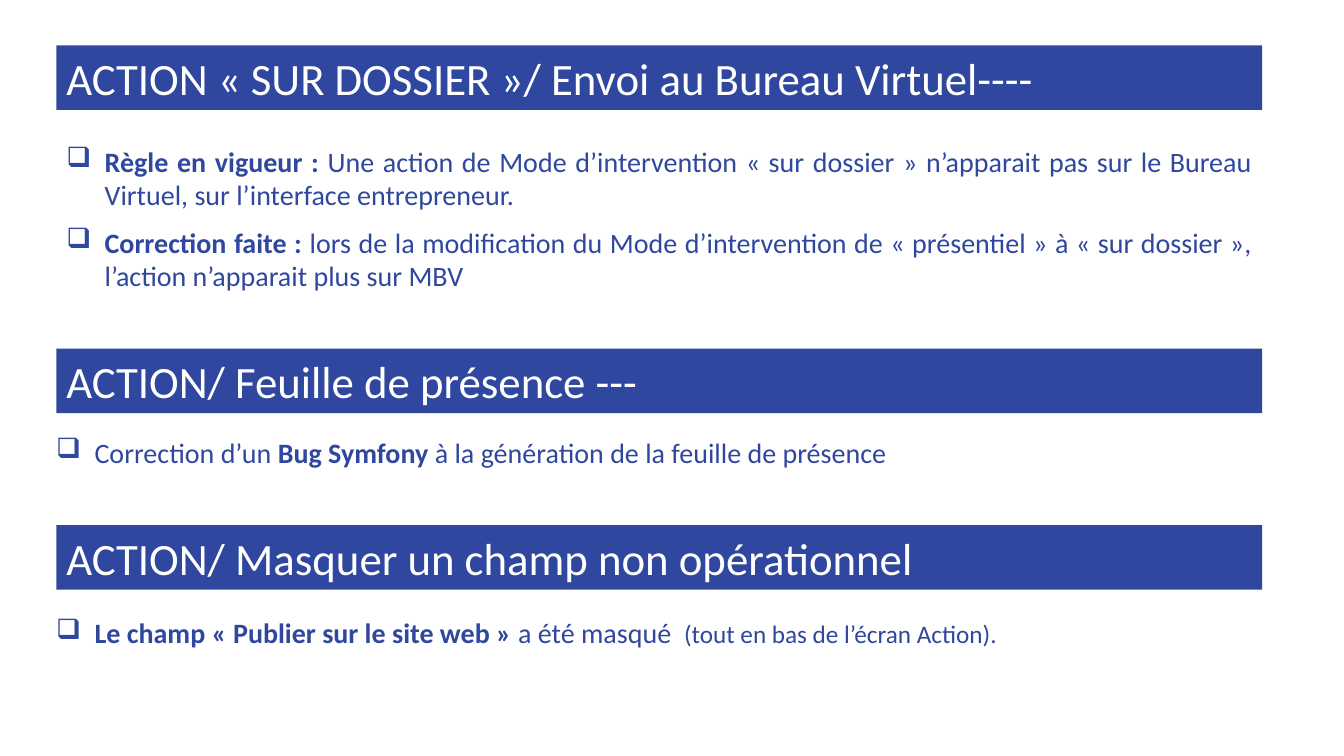
"""Build a slide of three blue heading bars, each followed by bulleted notes."""
from lxml import etree
from pptx import Presentation
from pptx.dml.color import RGBColor
from pptx.enum.shapes import MSO_SHAPE
from pptx.enum.text import MSO_ANCHOR, PP_ALIGN
from pptx.oxml.ns import qn
from pptx.util import Inches, Pt

RECTANGLE = MSO_SHAPE.RECTANGLE
TOP, MIDDLE = MSO_ANCHOR.TOP, MSO_ANCHOR.MIDDLE
LEFT, JUSTIFY = PP_ALIGN.LEFT, PP_ALIGN.JUSTIFY

COLORS = {"blue": "2F479E", "white": "FFFFFF"}
FONT = "Calibri"

deck = Presentation()
deck.slide_width, deck.slide_height = Inches(13.33), Inches(7.5)
page = deck.slides.add_slide(deck.slide_layouts[6])

COLUMN = deck.slide_width / 133.3
ROW = deck.slide_height / 75
BAR_LEFT, BAR_WIDTH, BAR_HEIGHT = 5.6, 119.6, 6.4
INDENT = Inches(0.38)


def write(para, spans, color, align=LEFT, after=0, bullet=None):
    para.alignment = align
    para.space_after = Pt(after)
    if bullet:
        properties = para._p.get_or_add_pPr()
        properties.set("marL", str(INDENT))
        properties.set("indent", str(-INDENT))
        etree.SubElement(properties, qn("a:buChar")).set("char", bullet)
    for text, size, bold in spans:
        span = para.add_run()
        span.text = text
        span.font.name = FONT
        span.font.size = Pt(size)
        span.font.bold = bold
        span.font.color.rgb = RGBColor.from_string(COLORS[color])


sections = [
    {
        "title": "ACTION « SUR DOSSIER »/ Envoi au Bureau Virtuel----",
        "bar_top": 4.5,
        "notes_box": (BAR_LEFT, 13.8, 15.9),
        "align": JUSTIFY,
        "notes": [
            [("Règle en vigueur : ", 20, True),
             ("Une action de Mode d’intervention « sur dossier » n’apparait pas "
              "sur le Bureau Virtuel, sur l’interface entrepreneur.", 20, False)],
            [("Correction faite : ", 20, True),
             ("lors de la modification du Mode d’intervention de « présentiel » "
              "à « sur dossier », l’action n’apparait plus sur MBV", 20, False)],
        ],
    },
    {
        "title": "ACTION/ Feuille de présence ---",
        "bar_top": 34.6,
        "notes_box": (BAR_LEFT - 1, 42.7, 4.4),
        "align": JUSTIFY,
        "notes": [
            [("Correction d’un ", 20, False),
             ("Bug Symfony ", 20, True),
             ("à la génération de la feuille de présence", 20, False)],
        ],
    },
    {
        "title": "ACTION/ Masquer un champ non opérationnel",
        "bar_top": 52.1,
        "notes_box": (BAR_LEFT - 1, 60.6, 4.4),
        "align": LEFT,
        "notes": [
            [("Le champ « Publier sur le site web » ", 20, True),
             ("a été masqué  ", 20, False),
             ("(tout en bas de l’écran Action).", 18, False)],
        ],
    },
]

for section in sections:
    bar = page.shapes.add_shape(
        RECTANGLE, round(BAR_LEFT * COLUMN), round(section["bar_top"] * ROW),
        round(BAR_WIDTH * COLUMN), round(BAR_HEIGHT * ROW))
    bar.shadow.inherit = False
    bar.fill.solid()
    bar.fill.fore_color.rgb = RGBColor.from_string(COLORS["blue"])
    bar.line.fill.background()
    bar.text_frame.word_wrap = True
    bar.text_frame.vertical_anchor = MIDDLE
    write(bar.text_frame.paragraphs[0], [(section["title"], 32, False)], "white")

    left, top, height = section["notes_box"]
    box = page.shapes.add_textbox(
        round(left * COLUMN), round(top * ROW),
        round(BAR_WIDTH * COLUMN), round(height * ROW))
    frame = box.text_frame
    frame.word_wrap = True
    frame.vertical_anchor = TOP
    for index, spans in enumerate(section["notes"]):
        para = frame.add_paragraph() if index else frame.paragraphs[0]
        after = 10 if index < len(section["notes"]) - 1 else 0
        write(para, spans, "blue", align=section["align"], after=after, bullet="❑")

deck.save("out.pptx")
